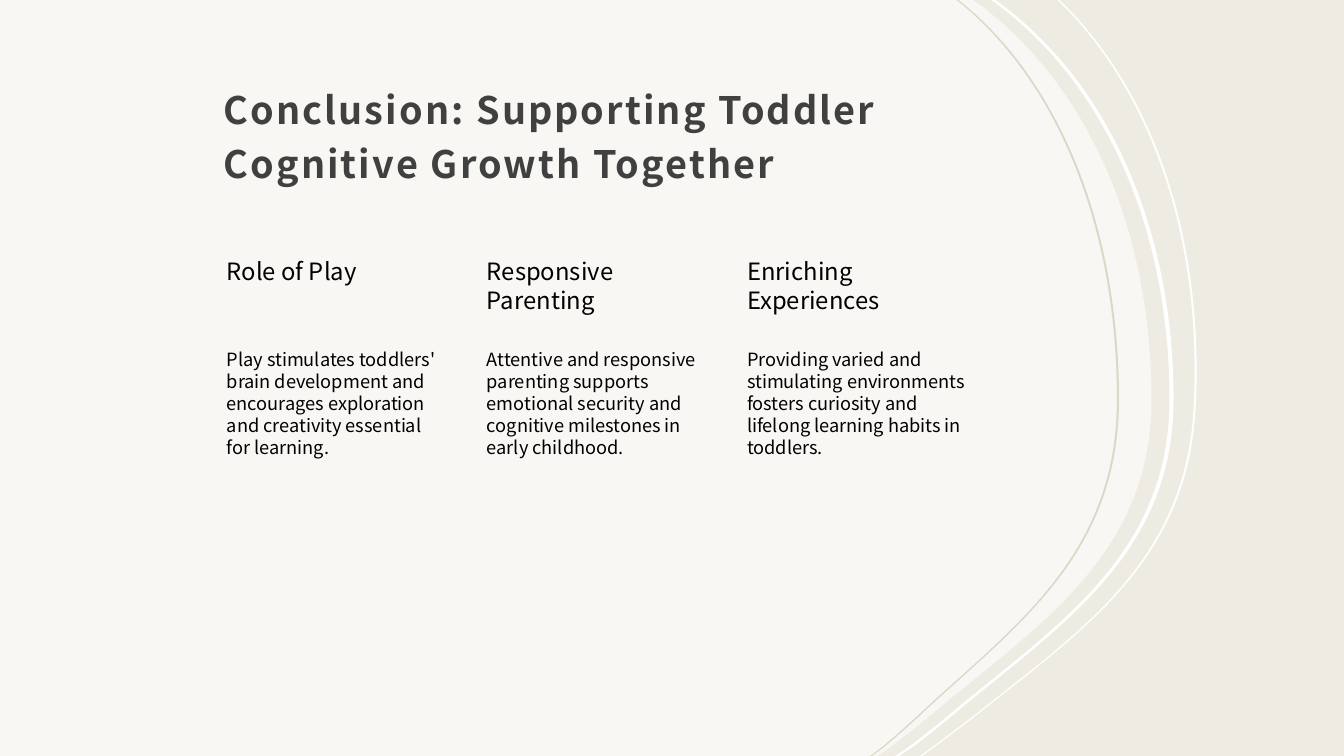
"""Build the closing slide on toddler cognitive growth."""
import pptx
import pptx.util
import pptx.dml.color
import pptx.enum.text
import pptx.oxml.ns
import lxml.etree

TITLE = "Conclusion: Supporting Toddler Cognitive Growth Together"
CARDS = [
    ("Role of Play",
     "Play stimulates toddlers' brain development and encourages exploration "
     "and creativity essential for learning."),
    ("Responsive Parenting",
     "Attentive and responsive parenting supports emotional security and "
     "cognitive milestones in early childhood."),
    ("Enriching Experiences",
     "Providing varied and stimulating environments fosters curiosity and "
     "lifelong learning habits in toddlers."),
]
COLORS = {"back": "EEEBE2", "white": "FFFFFF", "tan": "DDD7C5",
          "title": "404040", "text": "000000"}
FONT = "Noto Sans CJK JP"
WIDE, HIGH = 1333, 750
SCALE = 9144

EDGE = [(965, 0), (968, 2), (1079, 83), (1142, 229), (1142, 396),
        (1142, 543), (1041, 613), (938, 697),
        (919, 713), (901, 728), (882, 742), (870, 750)]
OUTER = [(1051, 0), (1054, 3), (1146, 94), (1194, 240), (1186, 402),
         (1179, 555), (1077, 623), (973, 706),
         (954, 721), (935, 735), (916, 749), (914, 750)]
INNER = [(865 + (x - 870) * 0.9, y) for x, y in EDGE]
STRIPES = [(OUTER, -2, 0, "white"), (EDGE, 18, 22, "white"),
           (INNER, -2, 0, "tan")]
DOWN, BACK = [2, 5, 8], [14, 17, 20]

LEFT, PITCH, CARD = 210, 258, 234
ROWS = [(253, 91, 17), (344, 306, 13)]


def emu(px):
    return pptx.util.Emu(round(px * SCALE))


def rgb(name):
    return pptx.dml.color.RGBColor.from_string(COLORS[name])


def shift(dots, dx):
    return [(x + dx, y) for x, y in dots]


def bend(form, starts):
    """Join three line steps into one Bezier step at each start."""
    qn = pptx.oxml.ns.qn
    steps = list(next(form._element.iter(qn("a:path"))))
    for start in starts:
        first = steps[start]
        curve = lxml.etree.Element(qn("a:cubicBezTo"))
        first.addprevious(curve)
        for step in steps[start:start + 3]:
            curve.append(step[0])
            step.getparent().remove(step)


def draw(shapes, dots, starts, color):
    spots = [(emu(x), emu(y)) for x, y in dots]
    pen = shapes.build_freeform(*spots[0])
    pen.add_line_segments(spots[1:], close=True)
    form = pen.convert_to_shape()
    bend(form, starts)
    form.shadow.inherit = False
    form.fill.solid()
    form.fill.fore_color.rgb = rgb(color)
    form.line.fill.background()
    return form


def style(para, size, color, bold=False):
    para.alignment = pptx.enum.text.PP_ALIGN.LEFT
    para.font.name = FONT
    para.font.size = pptx.util.Pt(size)
    para.font.bold = bold
    para.font.color.rgb = rgb(color)


def inset(frame, left, top, right, low):
    frame.word_wrap = True
    frame.auto_size = pptx.enum.text.MSO_AUTO_SIZE.NONE
    frame.margin_left, frame.margin_top = emu(left), emu(top)
    frame.margin_right, frame.margin_bottom = emu(right), emu(low)


def add_art(shapes):
    panel = draw(shapes, EDGE + [(0, HIGH), (0, 0)], DOWN, "white")
    tint = next(panel._element.iter(pptx.oxml.ns.qn("a:srgbClr")))
    lxml.etree.SubElement(tint, pptx.oxml.ns.qn("a:alpha"), val="60000")
    for knots, near, far, color in STRIPES:
        ring = shift(knots, far) + shift(knots, near)[::-1]
        draw(shapes, ring, DOWN + BACK, color)


def add_title(shapes):
    title = shapes.title
    shapes._spTree.append(title._element)
    title.left, title.top = emu(LEFT), emu(48)
    title.width, title.height = emu(750), emu(147)
    frame = title.text_frame
    inset(frame, 12, 12, 12, 10)
    frame.vertical_anchor = pptx.enum.text.MSO_ANCHOR.BOTTOM
    frame.text = TITLE
    para = frame.paragraphs[0]
    para.line_spacing = 1.2
    style(para, 27, "title", True)
    para.runs[0]._r.get_or_add_rPr().set("spc", "150")


def add_cards(shapes):
    for col, card in enumerate(CARDS):
        for words, (top, tall, size) in zip(card, ROWS):
            box = shapes.add_textbox(emu(LEFT + col * PITCH), emu(top),
                                     emu(CARD), emu(tall))
            inset(box.text_frame, 15, 2, 2, 2)
            box.text_frame.text = words
            style(box.text_frame.paragraphs[0], size, "text")


def main():
    deck = pptx.Presentation()
    deck.slide_width, deck.slide_height = emu(WIDE), emu(HIGH)
    slide = deck.slides.add_slide(deck.slide_layouts[5])
    slide.background.fill.solid()
    slide.background.fill.fore_color.rgb = rgb("back")
    add_art(slide.shapes)
    add_title(slide.shapes)
    add_cards(slide.shapes)
    deck.save("out.pptx")


if __name__ == "__main__":
    main()
